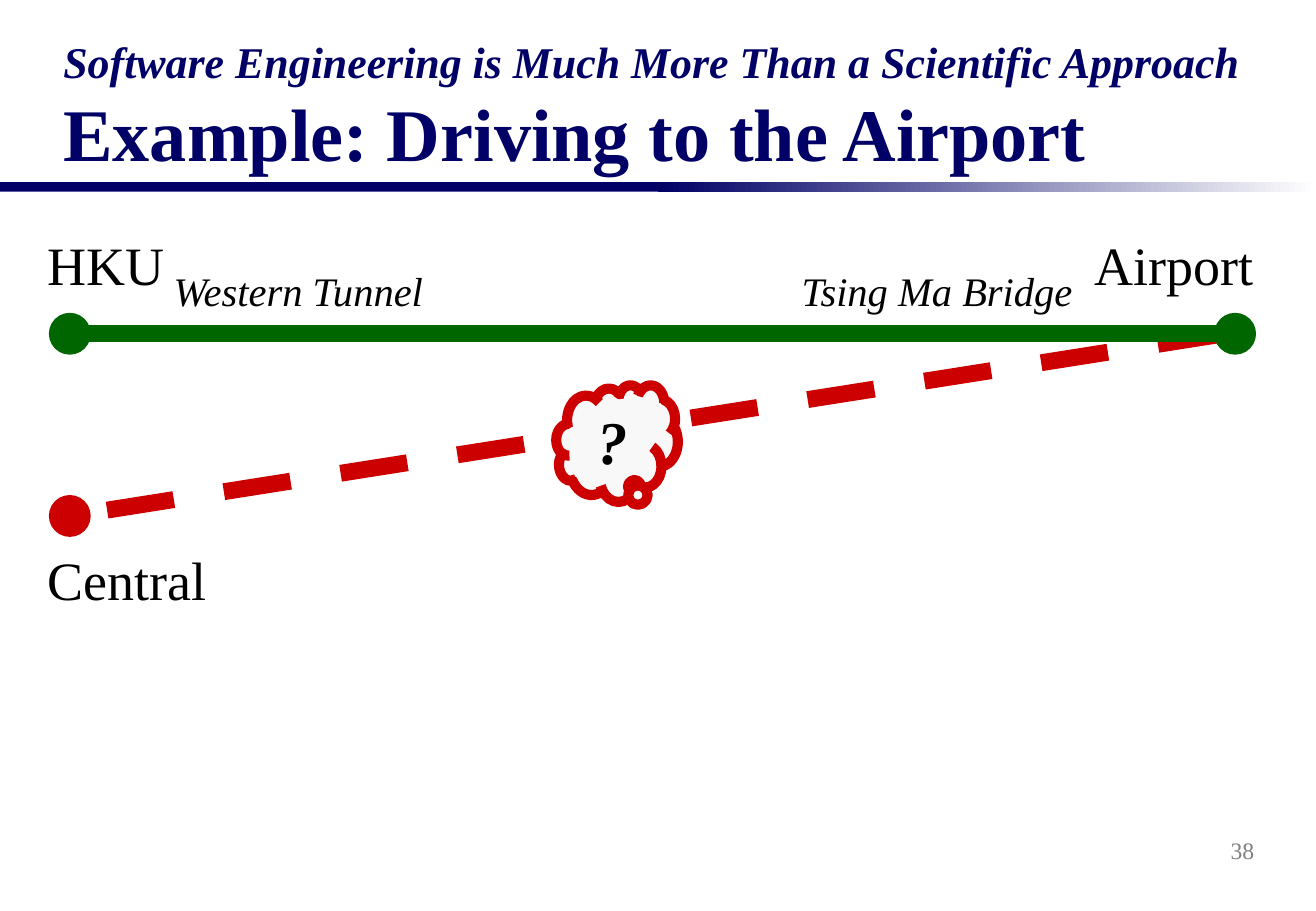
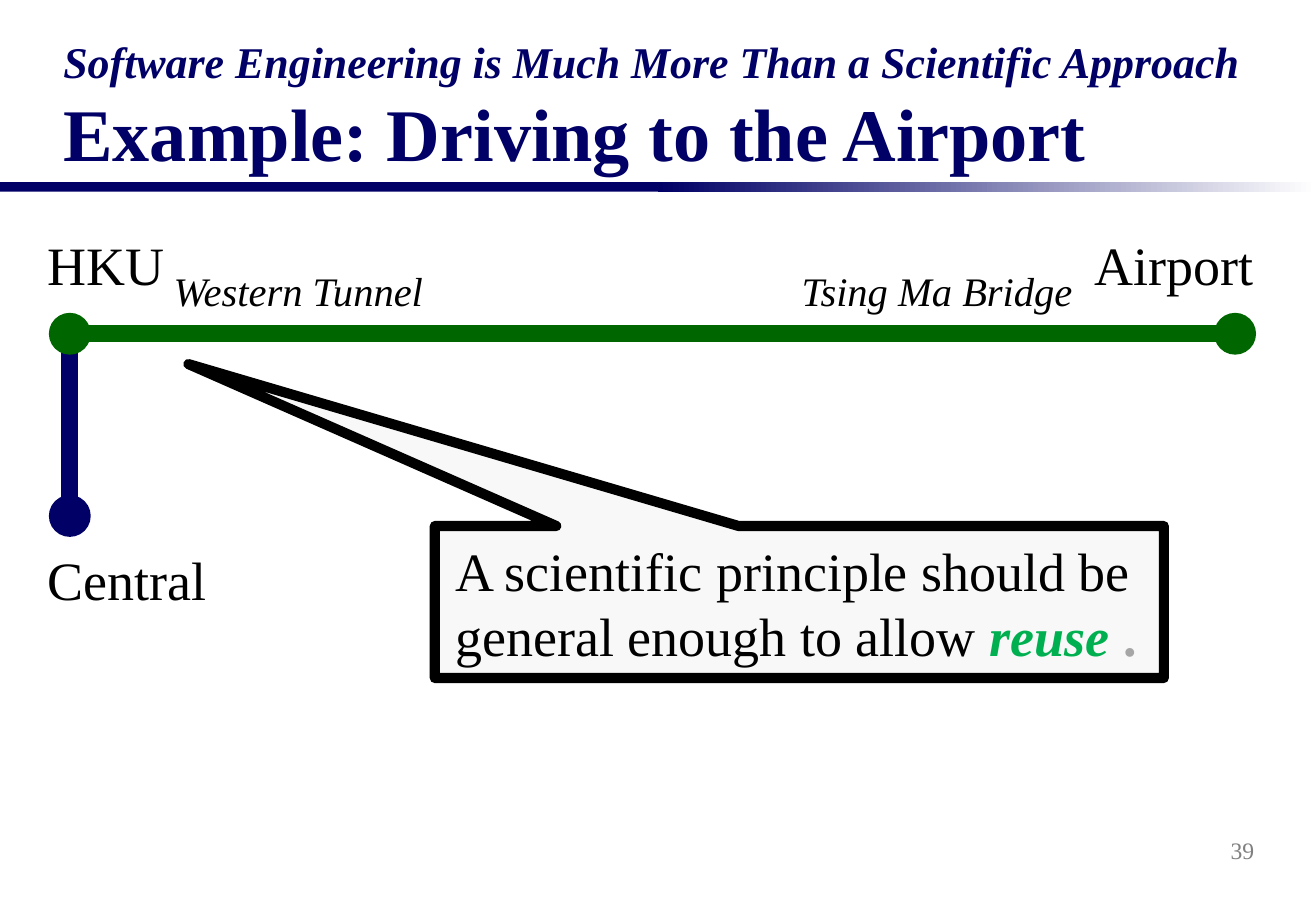
from collections import namedtuple

from lxml import etree
from pptx import Presentation
from pptx.dml.color import RGBColor
from pptx.enum.dml import MSO_LINE
from pptx.enum.shapes import MSO_CONNECTOR, MSO_SHAPE
from pptx.enum.text import MSO_ANCHOR, MSO_AUTO_SIZE, PP_ALIGN
from pptx.oxml.ns import qn
from pptx.util import Cm, Pt

RECTANGLE, OVAL = MSO_SHAPE.RECTANGLE, MSO_SHAPE.OVAL
CLOUD, SPEECH = MSO_SHAPE.CLOUD_CALLOUT, MSO_SHAPE.RECTANGULAR_CALLOUT
STRAIGHT, DASH = MSO_CONNECTOR.STRAIGHT, MSO_LINE.DASH
BOTTOM, MIDDLE = MSO_ANCHOR.BOTTOM, MSO_ANCHOR.MIDDLE
LEFT, CENTER, RIGHT = PP_ALIGN.LEFT, PP_ALIGN.CENTER, PP_ALIGN.RIGHT
FIXED, GROW = MSO_AUTO_SIZE.NONE, MSO_AUTO_SIZE.SHAPE_TO_FIT_TEXT

FONT = "Times New Roman"
COLOURS = {
    "navy": "000066", "white": "FFFFFF", "grey": "808080", "black": "000000",
    "red": "CC0000", "green": "006600", "paper": "F8F8F8",
    "emphasis": "00B050", "faded": "A6A6A6",
}
FORMATS = {
    "topic": {"size": Pt(26), "bold": True, "italic": True},
    "heading": {"size": Pt(44), "bold": True, "italic": False},
    "number": {"size": Pt(14)},
    "place": {"size": Pt(32)},
    "road": {"size": Pt(24), "italic": True},
    "question": {"size": Pt(36), "bold": True, "italic": True},
    "strong": {"size": Pt(32), "bold": True, "italic": True},
    "full stop": {"size": Pt(32), "bold": True},
}

Box = namedtuple("Box", "left top width height")
SLIDE = Box(0, 0, 27.51, 19.05)
TITLE = Box(1.07, 0.74, 25.4, 3.07)
BAND = Box(0, 3.81, SLIDE.width, 0.2)
NUMBER = Box(20.73, 17.15, 5.74, 1.27)
MAP = Box(1.46, 6.98, 24.36, 3.81)
PRINCIPLE = Box(9.09, 11, 15.24, 3.18)
DOT = 0.84


def colour(name):
    return RGBColor.from_string(COLOURS[name])


def lengths(box):
    return [Cm(value) for value in box]


def apply(target, values):
    for name, value in values.items():
        setattr(target, name, value)


def write(paragraph, text, style, ink="black"):
    run = paragraph.add_run()
    run.text = text
    apply(run.font, {"name": FONT, **FORMATS[style]})
    run.font.color.rgb = colour(ink)


def outlined(slide, kind, box, fill, line, weight):
    shape = slide.shapes.add_shape(kind, *lengths(box))
    shape.shadow.inherit = False
    shape.fill.solid()
    shape.fill.fore_color.rgb = colour(fill)
    shape.line.color.rgb = colour(line)
    shape.line.width = Pt(weight)
    return shape


def road(slide, start, end, ink, dash=None):
    line = slide.shapes.add_connector(STRAIGHT, *lengths(start + end))
    line.line.color.rgb = colour(ink)
    line.line.width = Pt(10)
    if dash:
        line.line.dash_style = dash
    etree.SubElement(line.element.spPr, qn("a:effectLst"))


def label(slide, box, text, style):
    frame = slide.shapes.add_textbox(*lengths(box)).text_frame
    apply(frame, {"word_wrap": False, "auto_size": GROW})
    write(frame.paragraphs[0], text, style)


def dot(slide, x, y, ink):
    box = Box(x - DOT / 2, y - DOT / 2, DOT, DOT)
    outlined(slide, OVAL, box, ink, ink, 1)


def band(slide, layout, box):
    half = box.width / 2
    for left, fades in ((box.left, False), (box.left + half, True)):
        part = outlined(slide, RECTANGLE, box._replace(left=left, width=half),
                        "navy", "navy", 1)
        part.line.fill.background()
        if fades:
            part.fill.gradient()
            part.fill.gradient_angle = 0
            for stop, position, ink in zip(part.fill.gradient_stops, (0, 1),
                                           ("navy", "white")):
                stop.position = position
                stop.color.rgb = colour(ink)
        layout.shapes.element.append(part.element)


def title(slide, box):
    holder = slide.shapes.title
    apply(holder, dict(zip(Box._fields, lengths(box))))
    frame = holder.text_frame
    apply(frame, {"vertical_anchor": BOTTOM, "auto_size": FIXED,
                  "word_wrap": True})
    topic, heading = frame.paragraphs[0], frame.add_paragraph()
    topic.alignment = heading.alignment = LEFT
    write(topic, "Software Engineering is Much More Than a Scientific Approach",
          "topic", "navy")
    write(heading, "Example: Driving to the Airport", "heading", "navy")


def page_number(slide, box, number):
    frame = slide.shapes.add_textbox(*lengths(box)).text_frame
    apply(frame, {"vertical_anchor": MIDDLE, "word_wrap": True})
    frame.paragraphs[0].alignment = RIGHT
    write(frame.paragraphs[0], str(number), "number", "grey")


def route_map(slide, box, central_ink):
    x, y, length, drop = box
    for dot_x, dot_y, ink in ((x, y, "green"), (x + length, y, "green"),
                              (x, y + drop, central_ink)):
        dot(slide, dot_x, dot_y, ink)
    road(slide, (x, y), (x + length, y), "green")
    for dx, dy, width, height, text, style in (
        (-0.72, -2.26, 2.95, 1.6, "HKU", "place"),
        (length - 3.19, -2.26, 3.84, 1.6, "Airport", "place"),
        (-0.72, drop + 0.51, 3.84, 1.6, "Central", "place"),
        (1.92, -1.54, 5.84, 1.27, "Western Tunnel", "road"),
        (15.05, -1.54, 6.25, 1.27, "Tsing Ma Bridge", "road"),
    ):
        label(slide, Box(x + dx, y + dy, width, height), text, style)


def unknown_route(slide, box):
    x, y, length, drop = box
    road(slide, (x + length - 0.22, y), (x, y + drop), "red", DASH)
    cloud = outlined(slide, CLOUD, Box(x + 10.17, y + 1.07, 2.54, 2.44),
                     "paper", "red", 6)
    cloud.adjustments[0], cloud.adjustments[1] = 0.135, 0.349
    frame = cloud.text_frame
    apply(frame, {"word_wrap": False, "vertical_anchor": MIDDLE})
    frame.paragraphs[0].alignment = CENTER
    write(frame.paragraphs[0], "?", "question")


def reused_route(slide, box):
    x, y, _, drop = box
    road(slide, (x, y), (x, y + drop), "navy")


def principle(slide, box):
    callout = outlined(slide, SPEECH, box, "paper", "black", 6)
    callout.adjustments[0], callout.adjustments[1] = -0.838, -1.565
    frame = callout.text_frame
    apply(frame, {"word_wrap": True, "vertical_anchor": MIDDLE,
                  "margin_left": Cm(0.43)})
    sentence = frame.paragraphs[0]
    sentence.alignment = LEFT
    write(sentence, "A scientific principle should be general enough to allow ",
          "place")
    write(sentence, "reuse", "strong", "emphasis")
    write(sentence, " .", "full stop", "faded")


def airport_slide(prs, layout, number, central_ink, central_route):
    slide = prs.slides.add_slide(layout)
    title(slide, TITLE)
    page_number(slide, NUMBER, number)
    central_route(slide, MAP)
    route_map(slide, MAP, central_ink)
    return slide


def main():
    prs = Presentation()
    prs.slide_width, prs.slide_height = Cm(SLIDE.width), Cm(SLIDE.height)
    layout = prs.slide_layouts[5]
    unknown = airport_slide(prs, layout, 38, "red", unknown_route)
    band(unknown, layout, BAND)
    reused = airport_slide(prs, layout, 39, "navy", reused_route)
    principle(reused, PRINCIPLE)
    prs.save("out.pptx")


if __name__ == "__main__":
    main()
